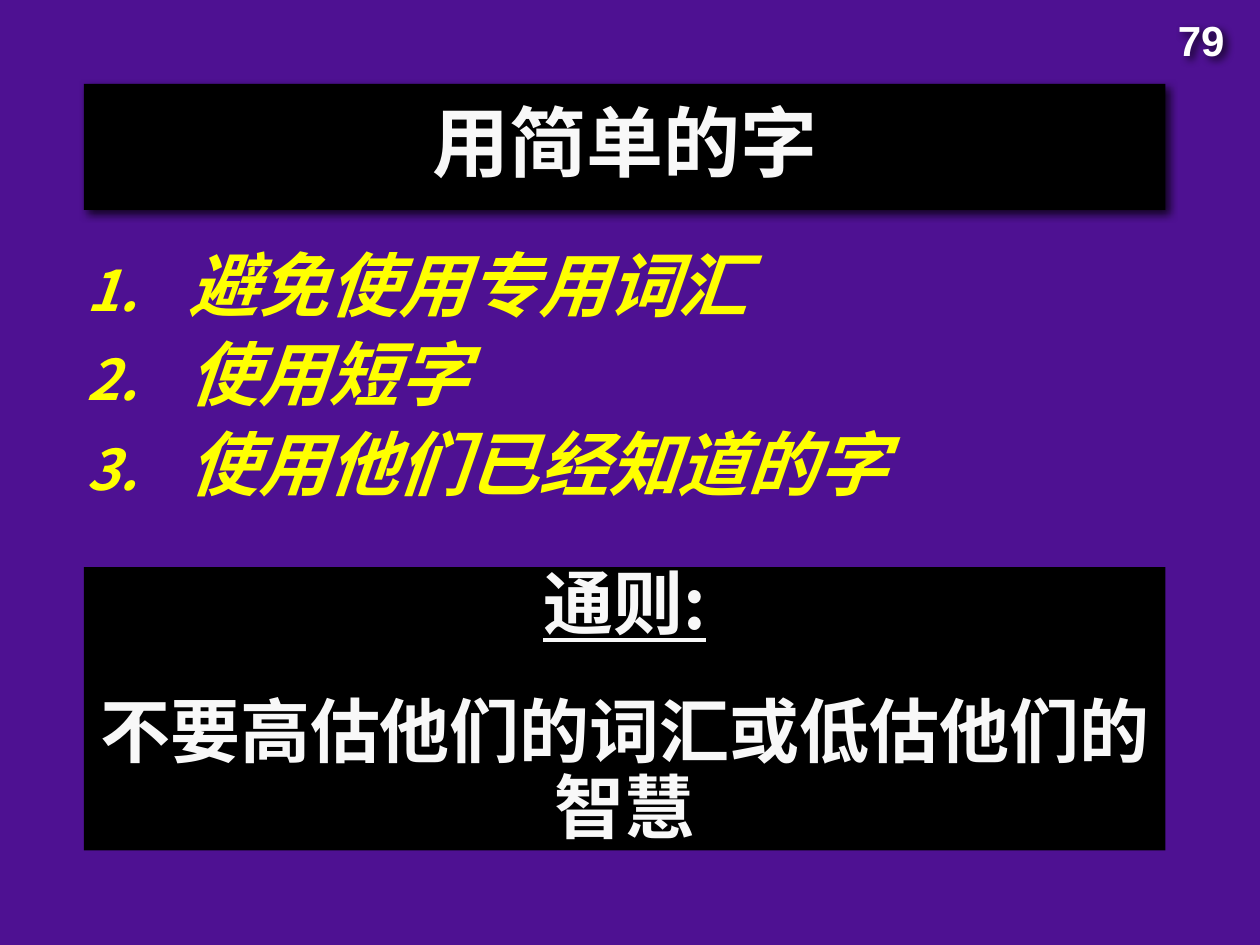
import pptx
import pptx.util
import pptx.dml.color
import pptx.enum.shapes
import pptx.enum.text
import pptx.oxml
import pptx.oxml.ns
from lxml import etree

Pt = pptx.util.Pt
qn = pptx.oxml.ns.qn
ALIGN = pptx.enum.text.PP_ALIGN

PAGE = "79"
TITLE = "用简单的字"
TIPS = ["避免使用专用词汇", "使用短字", "使用他们已经知道的字"]
RULE = ["通则:", "不要高估他们的词汇或低估他们的智慧"]
CJK = "Noto Sans CJK TC"
PURPLE, BLACK, WHITE, OFF_WHITE, YELLOW = "4E1192", "000000", "FFFFFF", "F8F8F8", "FFFF00"

BAND_LEFT, BAND_WIDTH = 48, 618
TITLE_BOX = (BAND_LEFT, 48, BAND_WIDTH, 72)
TIPS_BOX = (42, 126, 630, 180)
RULE_BOX = (BAND_LEFT, 324, BAND_WIDTH, 162)
PAGE_BOX = (BAND_LEFT + BAND_WIDTH, 6, 42, 36.5)
HANGING = 58.5


def colour(value):
    return pptx.dml.color.RGBColor.from_string(value)


def place(shape, box):
    shape.left, shape.top, shape.width, shape.height = map(Pt, box)


def paint(shape, value):
    shape.fill.solid()
    shape.fill.fore_color.rgb = colour(value)
    shape.line.fill.background()


def cast_shadow(shape):
    effects = etree.SubElement(shape._element.spPr, qn("a:effectLst"))
    shadow = etree.SubElement(effects, qn("a:outerShdw"), blurRad=str(Pt(5)),
                              dist=str(Pt(3)), dir="2700000", algn="ctr", rotWithShape="0")
    tone = etree.SubElement(shadow, qn("a:srgbClr"), val=BLACK)
    etree.SubElement(tone, qn("a:alpha"), val="75000")


def number(paragraph):
    props = paragraph._p.get_or_add_pPr()
    props.set("marL", str(Pt(HANGING)))
    props.set("indent", str(-Pt(HANGING)))
    etree.SubElement(props, qn("a:buSzPct"), val="80000")
    etree.SubElement(props, qn("a:buAutoNum"), type="arabicPeriod")


def style(paragraph, size, value, face=CJK, italic=False, underline=False):
    font = paragraph.font
    font.size, font.name, font.bold = Pt(size), face, True
    font.italic, font.underline = italic, underline
    font.color.rgb = colour(value)
    etree.SubElement(paragraph._p.pPr.find(qn("a:defRPr")), qn("a:ea"), typeface=face)


def write(shape, lines, align, before=0, wrap=True):
    frame = shape.text_frame
    frame.text = "\n".join(lines)
    frame.word_wrap = wrap
    frame.auto_size = pptx.enum.text.MSO_AUTO_SIZE.NONE
    frame.vertical_anchor = pptx.enum.text.MSO_ANCHOR.MIDDLE
    for paragraph in frame.paragraphs:
        paragraph.alignment = align
        paragraph.line_spacing = 0.9
        paragraph.space_before = Pt(before)
    return frame.paragraphs


def main():
    deck = pptx.Presentation()
    deck.slide_width, deck.slide_height = Pt(720), Pt(540)
    slide = deck.slides.add_slide(deck.slide_layouts[1])
    slide.background.fill.solid()
    slide.background.fill.fore_color.rgb = colour(PURPLE)

    title, tips = slide.placeholders
    place(title, TITLE_BOX)
    paint(title, BLACK)
    cast_shadow(title)
    style(write(title, [TITLE], ALIGN.CENTER)[0], 44, OFF_WHITE)

    place(tips, TIPS_BOX)
    for tip in write(tips, TIPS, ALIGN.LEFT, before=8):
        number(tip)
        style(tip, 40, YELLOW, italic=True)

    rule = slide.shapes.add_shape(pptx.enum.shapes.MSO_SHAPE.RECTANGLE, *map(Pt, RULE_BOX))
    paint(rule, BLACK)
    rule.shadow.inherit = False
    heading, advice = write(rule, RULE, ALIGN.CENTER)
    style(heading, 40, OFF_WHITE, underline=True)
    style(advice, 40, OFF_WHITE)
    advice.space_before = Pt(30)

    page = slide.shapes.add_textbox(*map(Pt, PAGE_BOX))
    cast_shadow(page)
    style(write(page, [PAGE], ALIGN.LEFT, wrap=False)[0], 24, WHITE, face="Arial")

    deck.save("out.pptx")


if __name__ == "__main__":
    main()
